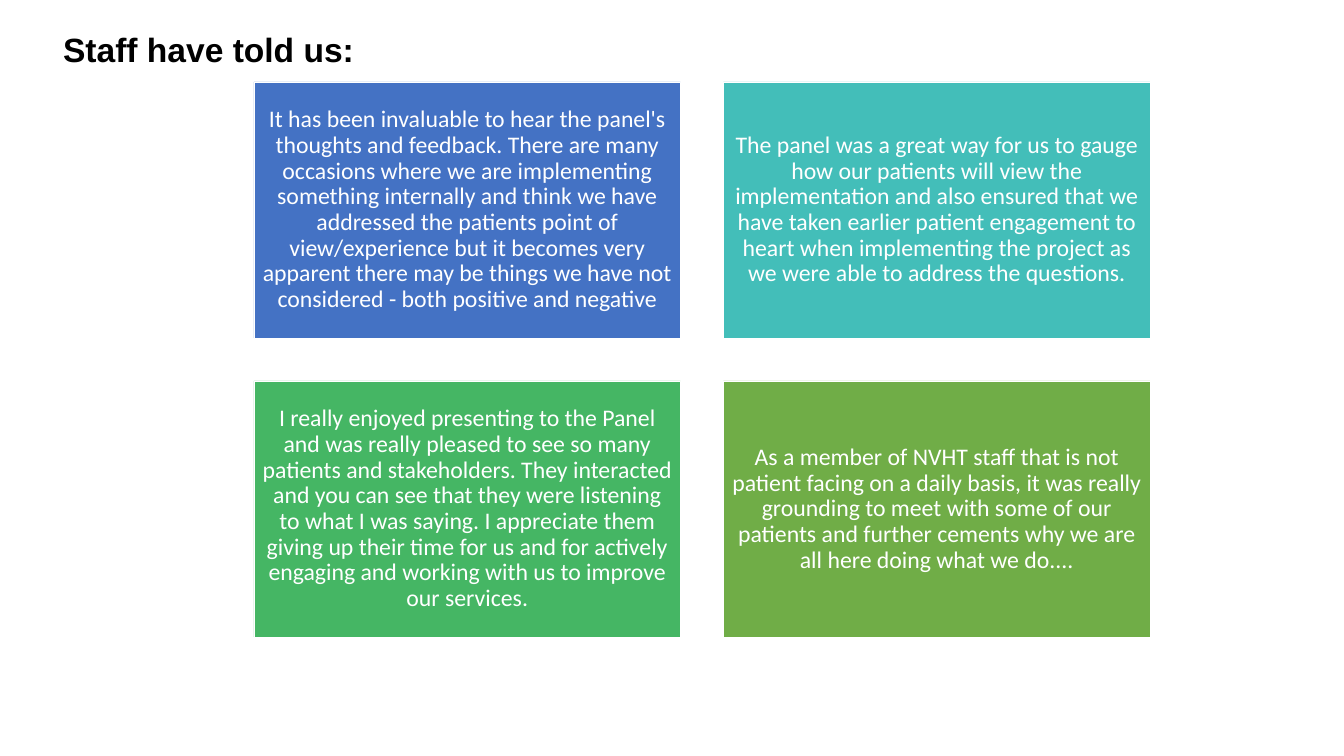
from pptx import Presentation
from pptx import util as u
from pptx.dml.color import RGBColor
from pptx.enum import shapes, text

PX = 914400 / 50.4
COLORS = {
    "ink": "000000",
    "paper": "FFFFFF",
    "blue": "4472C4",
    "teal": "43BEB9",
    "green": "45B664",
    "olive": "70AD47",
}
QUOTES = [
    ("blue", "It has been invaluable to hear the panel's thoughts and feedback. "
     "There are many occasions where we are implementing something internally and "
     "think we have addressed the patients point of view/experience but it becomes "
     "very apparent there may be things we have not considered - both positive and "
     "negative"),
    ("teal", "The panel was a great way for us to gauge how our patients will view "
     "the implementation and also ensured that we have taken earlier patient "
     "engagement to heart when implementing the project as we were able to address "
     "the questions."),
    ("green", "I really enjoyed presenting to the Panel and was really pleased to see "
     "so many patients and stakeholders. They interacted and you can see that they "
     "were listening to what I was saying. I appreciate them giving up their time for "
     "us and for actively engaging and working with us to improve our services."),
    ("olive", "As a member of NVHT staff that is not patient facing on a daily basis, "
     "it was really grounding to meet with some of our patients and further cements "
     "why we are all here doing what we do...."),
]


def px(length):
    return u.Emu(round(length * PX))


def color(name):
    return RGBColor.from_string(COLORS[name])


def write(frame, words, font, size, ink, align, bold=False):
    frame.word_wrap = True
    frame.auto_size = text.MSO_AUTO_SIZE.NONE
    para = frame.paragraphs[0]
    para.text = words
    para.alignment = align
    para.line_spacing = 0.9
    para.space_before = u.Pt(0)
    para.font.name = font
    para.font.size = u.Pt(size)
    para.font.bold = bold
    para.font.color.rgb = color(ink)


def add_title(page, left, top, width, height):
    title = page.shapes.title
    title.left, title.top = px(left), px(top)
    title.width, title.height = px(width), px(height)
    frame = title.text_frame
    frame.vertical_anchor = text.MSO_ANCHOR.TOP
    write(frame, "Staff have told us:", "Arial", 48, "ink", text.PP_ALIGN.LEFT, True)


def add_quote(page, left, top, width, height, fill, words):
    box = page.shapes.add_shape(
        shapes.MSO_SHAPE.RECTANGLE, px(left), px(top), px(width), px(height))
    box.shadow.inherit = False
    box.fill.solid()
    box.fill.fore_color.rgb = color(fill)
    box.line.color.rgb = color("paper")
    box.line.width = u.Pt(1)
    frame = box.text_frame
    frame.margin_left = frame.margin_right = px(7)
    frame.margin_top = frame.margin_bottom = px(7)
    frame.vertical_anchor = text.MSO_ANCHOR.MIDDLE
    write(frame, words, "Calibri", 34, "paper", text.PP_ALIGN.CENTER)


def add_quote_grid(page, left, top, width, height, gap=43, columns=2):
    rows = len(QUOTES) // columns
    card_width = (width - gap * (columns - 1)) / columns
    card_height = (height - gap * (rows - 1)) / rows
    for index, (fill, words) in enumerate(QUOTES):
        row, column = divmod(index, columns)
        add_quote(page, left + column * (card_width + gap),
                  top + row * (card_height + gap),
                  card_width, card_height, fill, words)


def main():
    deck = Presentation()
    deck.slide_width, deck.slide_height = px(1344), px(756)
    page = deck.slides.add_slide(deck.slide_layouts[5])
    add_title(page, 58, 31, 318, 59)
    add_quote_grid(page, 254, 82, 896, 555)
    deck.save("out.pptx")


if __name__ == "__main__":
    main()
